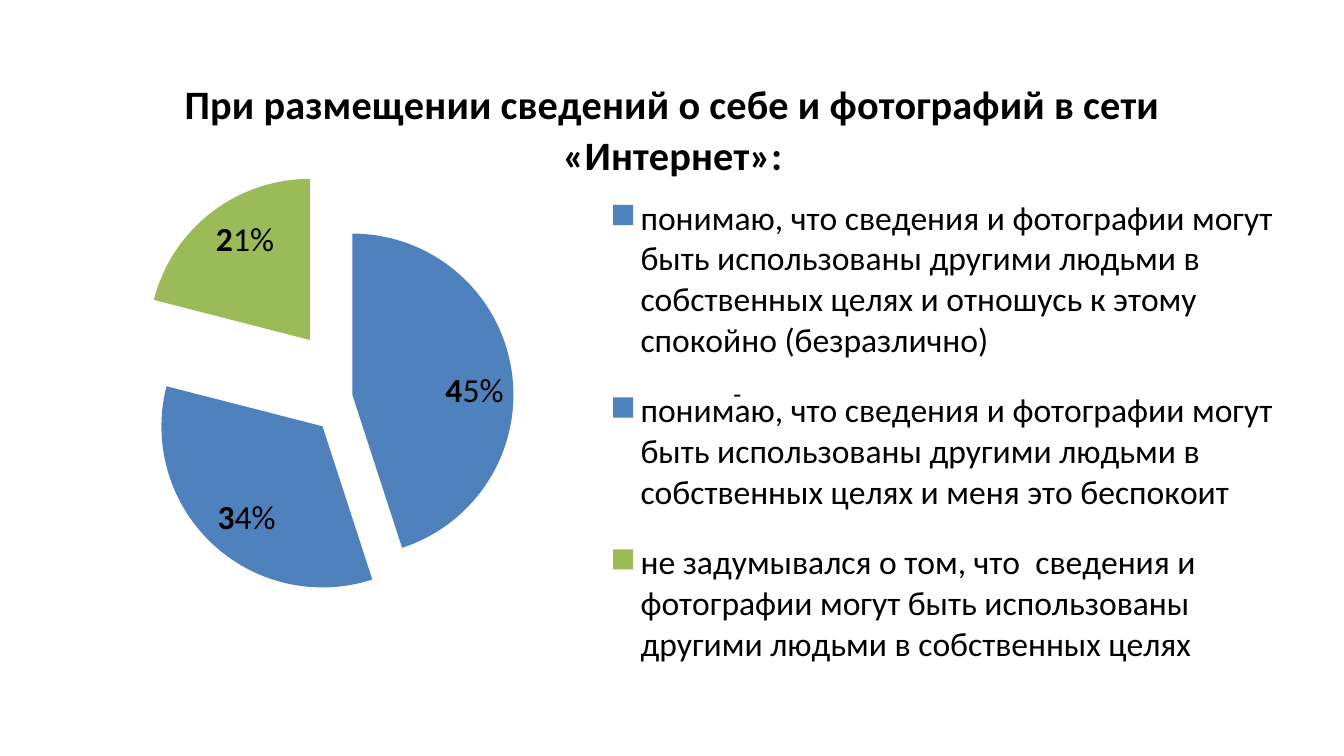
from pptx import Presentation
from pptx.chart.data import CategoryChartData as Data
from pptx.dml.color import RGBColor
from pptx.enum.chart import XL_CHART_TYPE as Kind, XL_LABEL_POSITION as Place, XL_LEGEND_POSITION as Side
from pptx.oxml import parse_xml
from pptx.oxml.ns import nsdecls, qn
from pptx.util import Cm, Pt

TITLE = "При размещении сведений о себе и фотографий в сети «Интернет»:"
USED = "понимаю, что сведения и фотографии могут быть использованы другими людьми в собственных целях и "
SLICES = [
    (USED + "отношусь к этому спокойно (безразлично)", 45, "4F81BD", 0),
    (USED + "меня это беспокоит", 34, "4F81BD", 27),
    ("не задумывался о том, что  сведения и фотографии могут быть использованы "
     "другими людьми в собственных целях", 21, "9BBB59", 43),
]


def paint(hue):
    """Turn a hex string into a colour."""
    return RGBColor.from_string(hue)


def style(font, size, bold=False):
    """Set the slide's typeface, size and weight."""
    font.name, font.size, font.bold = "Calibri", Pt(size), bold
    font.color.rgb = paint("000000")


def make(tag, val):
    """Build a chart element with one value."""
    return parse_xml(f'<c:{tag} {nsdecls("c")} val="{val}"/>')


def place(item, x, y, w, h, inner=False):
    """Give a chart part a manual layout in fractions of the chart."""
    for old in item.findall(qn("c:layout")):
        item.remove(old)
    rows = [("layoutTarget", "inner")] if inner else []
    rows += [("xMode", "edge"), ("yMode", "edge"), ("x", x), ("y", y), ("w", w), ("h", h)]
    body = "".join(f'<c:{tag} val="{val}"/>' for tag, val in rows)
    return parse_xml(f'<c:layout {nsdecls("c")}><c:manualLayout>{body}</c:manualLayout></c:layout>')


def add_dash(slide):
    """Add the small dash line."""
    box = slide.shapes.add_textbox(Cm(13.61), Cm(7.01), Cm(10.03), Cm(0.86))
    box.text_frame.word_wrap = True
    para = box.text_frame.paragraphs[0]
    para.text = "-"
    style(para.font, 14)


def add_slice(series, index, value, hue, shift):
    """Colour, shift and label one slice."""
    point = series.points[index]
    fill = point.format.fill
    fill.solid()
    fill.fore_color.rgb = paint(hue)
    part = series._element.findall(qn("c:dPt"))[index]
    part.find(qn("c:spPr")).addprevious(make("explosion", shift))
    label = point.data_label
    para = label.text_frame.paragraphs[0]
    text = f"{value}%"
    for piece, bold in ((text[0], True), (text[1:], False)):
        run = para.add_run()
        run.text = piece
        style(run.font, 18, bold)
    label.position = Place.INSIDE_END


def add_pie(slide):
    """Add the exploded pie with its title and legend."""
    data = Data()
    data.categories = [row[0] for row in SLICES]
    data.add_series("Series 1", [row[1] for row in SLICES])
    frame = slide.shapes.add_chart(Kind.PIE, Cm(0.84), Cm(0.91), Cm(23.75), Cm(12.6), data)
    chart = frame.chart
    root = chart._chartSpace
    root.find(qn("c:chart")).addnext(parse_xml(
        f'<c:spPr {nsdecls("c", "a")}><a:noFill/><a:ln><a:noFill/></a:ln></c:spPr>'))
    style(chart.font, 18)
    chart.has_title = True
    para = chart.chart_title.text_frame.paragraphs[0]
    para.text = TITLE
    style(para.font, 21.6, True)
    chart.chart_title.include_in_layout = False

    plot = chart.plots[0]
    plot.vary_by_categories = True
    series = plot.series[0]
    for index, (_, value, hue, shift) in enumerate(SLICES):
        add_slice(series, index, value, hue, shift)
    series._element.find(qn("c:dPt")).addprevious(make("explosion", 20))
    area = root.find(".//" + qn("c:plotArea"))
    area.insert(0, place(area, 0, 0.23, 0.49, 0.58, inner=True))

    chart.has_legend = True
    legend = chart.legend
    legend.position = Side.RIGHT
    legend.include_in_layout = False
    style(legend.font, 18)
    part = legend._element
    spot = place(part, 0.44, 0.18, 0.55, 0.79)
    part.find(qn("c:legendPos")).addnext(spot)


def main():
    """Build and save the slide."""
    deck = Presentation()
    deck.slide_width, deck.slide_height = Cm(25.4), Cm(14.29)
    slide = deck.slides.add_slide(deck.slide_layouts[6])
    add_dash(slide)
    add_pie(slide)
    deck.save("out.pptx")


if __name__ == "__main__":
    main()
